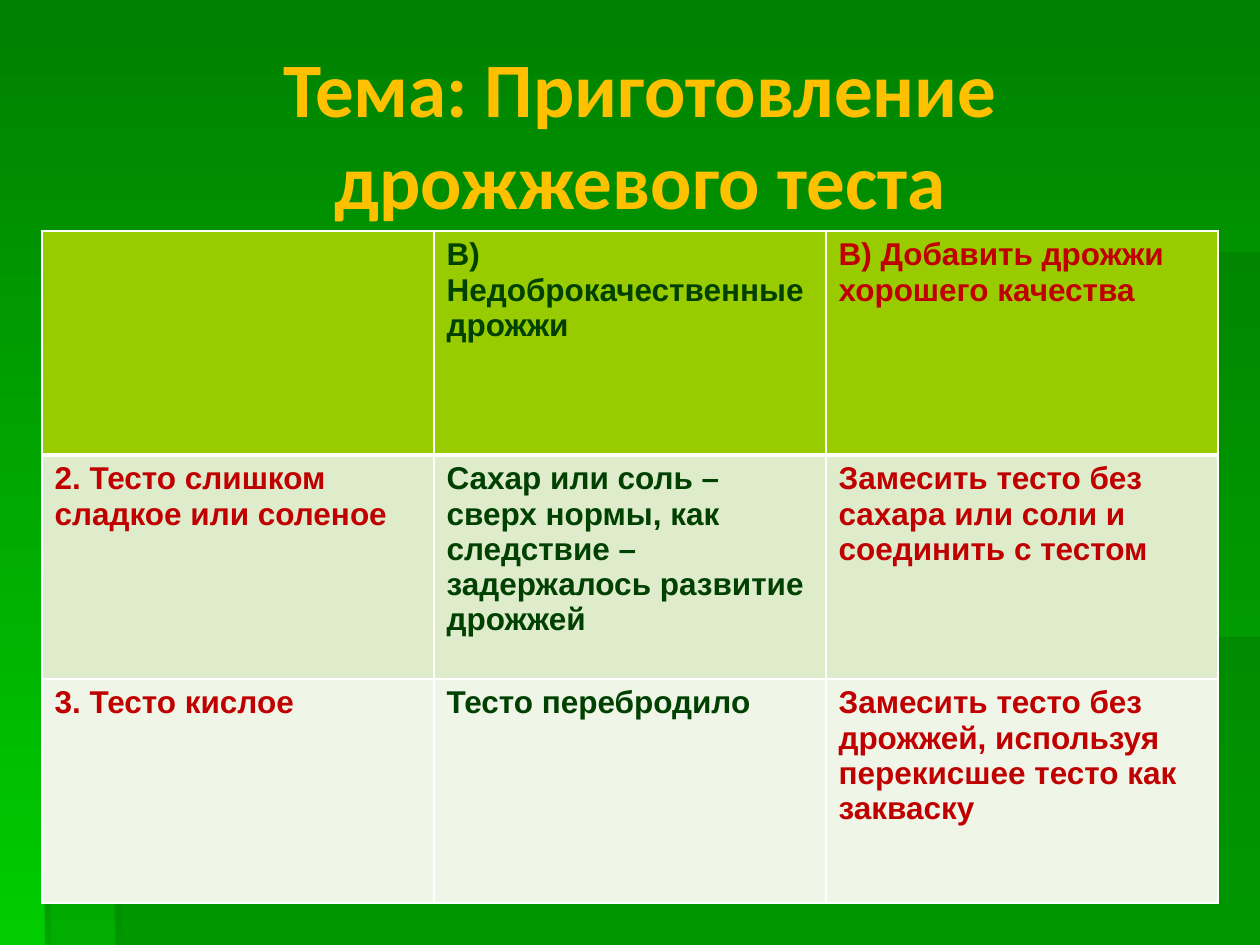
from lxml.etree import SubElement
from pptx import Presentation
from pptx.dml.color import RGBColor
from pptx.enum.text import MSO_ANCHOR, MSO_AUTO_SIZE, PP_ALIGN
from pptx.oxml.ns import qn
from pptx.util import Pt

# Content
TITLE = "Тема: Приготовление дрожжевого теста"
ROWS = [
    ("", "В) Недоброкачественные дрожжи", "В) Добавить дрожжи хорошего качества"),
    ("2. Тесто слишком сладкое или соленое",
     "Сахар или соль – сверх нормы, как следствие – задержалось развитие дрожжей",
     "Замесить тесто без сахара или соли и соединить с тестом"),
    ("3. Тесто кислое", "Тесто перебродило",
     "Замесить тесто без дрожжей, используя перекисшее тесто как закваску"),
]
ROW_FILLS = ("99CC00", "DEECCC", "EFF6E7")
COL_INKS = ("C00000", "004000", "C00000")

# Backdrop: outline, colour stops as (hex, opacity), angle
GREEN = "006600"
PANELS = [
    [(66, 364), (66, 540), (720, 540), (720, 364)],
    [(67.5, 364), (26, 364), (26, 540), (720, 540), (720, 144), (67.5, 144)],
]
EDGES = [
    ([(66, 144), (66, 147.6), (642, 147.6), (642, 144)],
     [(GREEN, 0), ("005E00", 100)], 0),
    ([(66, 144), (66, 367), (69.6, 367), (69.2, 147)],
     [("668666", 100), (GREEN, 100)], 90),
    ([(65.6, 540), (69.6, 540), (69.2, 366), (65.6, 363)],
     [("668666", 100), (GREEN, 0)], 90),
    ([(25.2, 363), (25.2, 366.6), (385, 366.6), (385, 363)],
     [(GREEN, 0), ("005E00", 100)], 0),
    ([(25.2, 363), (25.2, 540), (28.8, 540), (28.8, 366.6)],
     [("668666", 100), (GREEN, 10)], 90),
]


def ink(code):
    return RGBColor.from_string(code)


def blend(fill, stops, turn):
    fill.gradient()
    fill.gradient_angle = (360 - turn) % 360
    for stop, (code, _) in zip(fill.gradient_stops, stops):
        stop.color.rgb = ink(code)


def fade(shape, levels):
    colors = shape._element.spPr.iter(qn("a:srgbClr"))
    for color, level in zip(list(colors), levels):
        if level < 100:
            SubElement(color, qn("a:alpha"), val=str(level * 1000))


def trace(shapes, dots):
    pts = [(Pt(x), Pt(y)) for x, y in dots]
    pen = shapes.build_freeform(*pts[0], scale=1.0)
    pen.add_line_segments(pts[1:], close=True)
    shape = pen.convert_to_shape()
    shape.shadow.inherit = False
    shape.line.fill.background()
    return shape


def write(para, text, font, size, code):
    run = para.add_run()
    run.text = text
    run.font.name = font
    run.font.size = Pt(size)
    run.font.bold = True
    run.font.color.rgb = ink(code)


def border(cell, widths):
    props = cell._tc.get_or_add_tcPr()
    for spot, (side, width) in enumerate(widths.items()):
        line = SubElement(props, qn("a:ln" + side), w=str(Pt(width)))
        solid = SubElement(line, qn("a:solidFill"))
        SubElement(solid, qn("a:srgbClr"), val="FFFFFF")
        props.insert(spot, line)


def main():
    deck = Presentation()
    deck.slide_width, deck.slide_height = Pt(720), Pt(540)
    slide = deck.slides.add_slide(deck.slide_layouts[5])
    shapes = slide.shapes

    # Backdrop
    blend(slide.background.fill, [("008000", 100), ("00CC00", 100)], 90)
    for dots in PANELS:
        panel = trace(shapes, dots)
        panel.fill.solid()
        panel.fill.fore_color.rgb = ink(GREEN)
        fade(panel, [30])
    for dots, stops, turn in EDGES:
        edge = trace(shapes, dots)
        blend(edge.fill, stops, turn)
        fade(edge, [level for _, level in stops])

    # Title, brought in front of the backdrop
    title = shapes.title
    shapes._spTree.append(title._element)
    title.left, title.top, title.width, title.height = map(Pt, (36, 19.5, 660, 113))
    frame = title.text_frame
    frame.word_wrap = True
    frame.auto_size = MSO_AUTO_SIZE.NONE
    frame.vertical_anchor = MSO_ANCHOR.MIDDLE
    para = frame.paragraphs[0]
    para.alignment = PP_ALIGN.CENTER
    write(para, TITLE, "Calibri", 44, "FFC000")

    # Table
    table = shapes.add_table(len(ROWS), len(COL_INKS),
                             Pt(24), Pt(132), Pt(672), Pt(384)).table
    for r, (texts, back) in enumerate(zip(ROWS, ROW_FILLS)):
        for c, (text, code) in enumerate(zip(texts, COL_INKS)):
            cell = table.cell(r, c)
            cell.fill.solid()
            cell.fill.fore_color.rgb = ink(back)
            border(cell, {"L": 1, "R": 1, "T": 3 if r == 1 else 1,
                          "B": 3 if r == 0 else 1})
            if text:
                write(cell.text_frame.paragraphs[0], text, "Arial", 18, code)

    deck.save("out.pptx")


if __name__ == "__main__":
    main()
